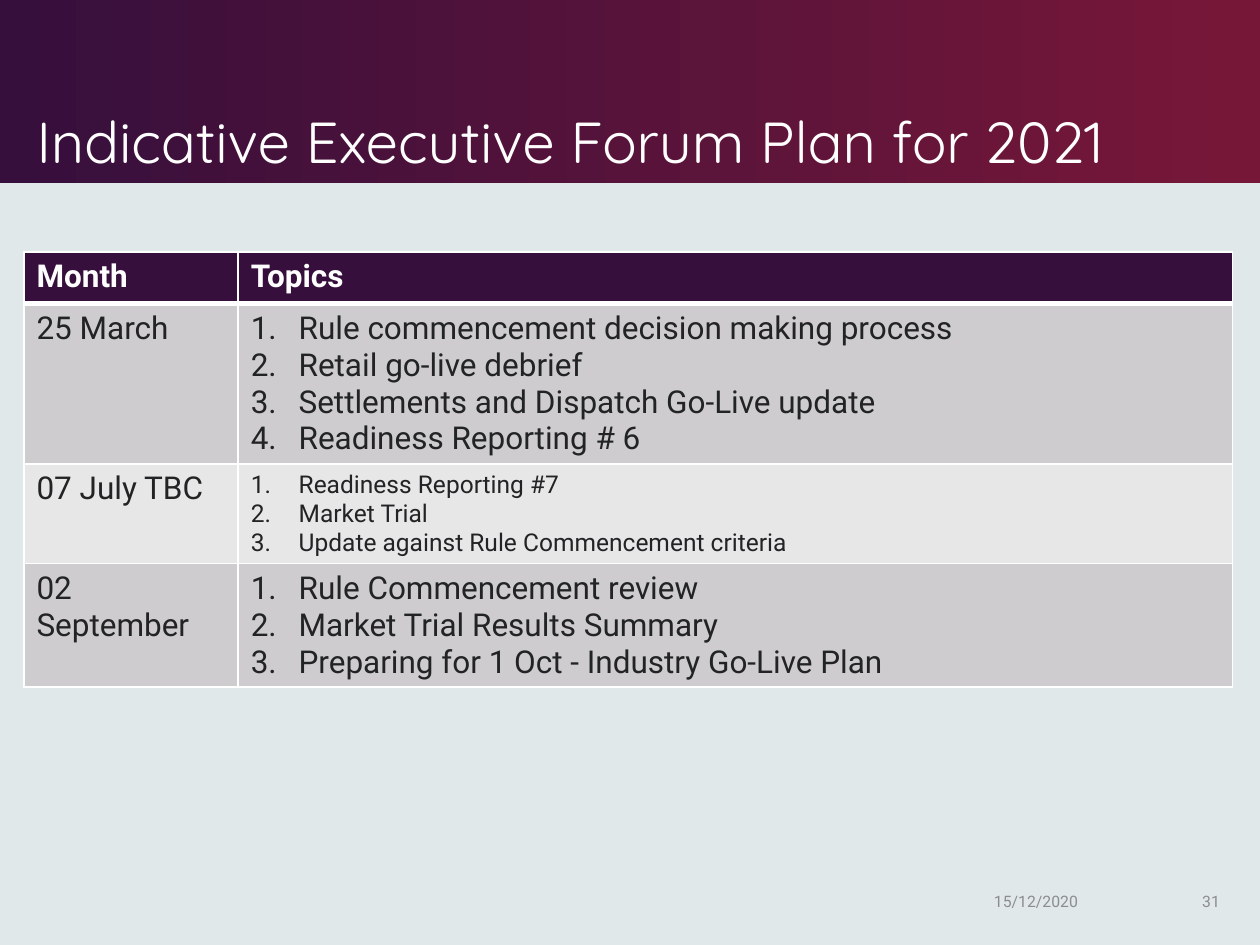
from lxml.etree import SubElement
from pptx import Presentation
from pptx.dml.color import RGBColor
from pptx.enum.dml import MSO_LINE
from pptx.enum.shapes import MSO_SHAPE
from pptx.enum.text import MSO_ANCHOR, MSO_AUTO_SIZE, PP_ALIGN
from pptx.oxml.ns import qn
from pptx.util import Inches, Pt

C = {"plum": "360F3C", "wine": "771738", "mist": "E0E8EA", "white": "FFFFFF",
     "ink": "222324", "dark": "CECCCE", "light": "E8E7E8", "grey": "8D8D8E"}
RGB = {k: RGBColor.from_string(v) for k, v in C.items()}


def add_run(p, text, size, color, bold=False, font="Roboto"):
    r = p.add_run()
    r.text = text
    r.font.name = font
    r.font.size = Pt(size)
    r.font.bold = bold
    r.font.color.rgb = RGB[color]


def add_border(cell, side, width):
    ln = SubElement(cell._tc.get_or_add_tcPr(), qn(f"a:ln{side}"), w=str(Pt(width)))
    fill = SubElement(ln, qn("a:solidFill"))
    SubElement(fill, qn("a:srgbClr"), val=C["white"])


prs = Presentation()
prs.slide_width, prs.slide_height = Inches(10), Inches(7.5)
W, H = prs.slide_width, prs.slide_height
margin = Inches(0.19)
content = Inches(9.59)
band_h = Inches(1.45)

s = prs.slides.add_slide(prs.slide_layouts[5])
s.background.fill.solid()
s.background.fill.fore_color.rgb = RGB["mist"]

band = s.shapes.add_shape(MSO_SHAPE.RECTANGLE, 0, 0, W, band_h)
band.shadow.inherit = False
band.line.fill.background()
band.fill.gradient()
band.fill.gradient_angle = 0
for stop, pos, name in zip(band.fill.gradient_stops, (0, 0.99), ("plum", "wine")):
    stop.position = pos
    stop.color.rgb = RGB[name]

title = s.shapes.title
title.element.addprevious(band.element)
title.left, title.top = margin, Inches(0.15)
title.width, title.height = content, band_h - title.top
tf = title.text_frame
tf.auto_size = MSO_AUTO_SIZE.NONE
tf.vertical_anchor = MSO_ANCHOR.BOTTOM
p = tf.paragraphs[0]
p.alignment = PP_ALIGN.LEFT
p.line_spacing = 0.9
add_run(p, "Indicative Executive Forum Plan for 2021", 33, "white", font="Quicksand")

plan = [
    ("Month", ["Topics"], 18, 0.41),
    ("25 March", ["Rule commencement decision making process", "Retail go-live debrief",
                  "Settlements and Dispatch Go-Live update", "Readiness Reporting # 6"], 18, 1.27),
    ("07 July TBC", ["Readiness Reporting #7", "Market Trial",
                     "Update against Rule Commencement criteria"], 14, 0.79),
    ("02 September", ["Rule Commencement review", "Market Trial Results Summary",
                      "Preparing for 1 Oct - Industry Go-Live Plan"], 18, 0.98),
]
table_h = Inches(sum(row[3] for row in plan))
table = s.shapes.add_table(len(plan), 2, margin, Inches(2), content, table_h).table
table.columns[0].width = Inches(1.7)
table.columns[1].width = content - Inches(1.7)

for i, (month, topics, size, height) in enumerate(plan):
    table.rows[i].height = Inches(height)
    head = i == 0
    fill = "plum" if head else "dark" if i % 2 else "light"
    for j, lines in enumerate(([month], topics)):
        cell = table.cell(i, j)
        for side in "LRTB":
            thick = (head and side == "B") or (i == 1 and side == "T")
            add_border(cell, side, 3 if thick else 1)
        cell.fill.solid()
        cell.fill.fore_color.rgb = RGB[fill]
        tf = cell.text_frame
        for n, line in enumerate(lines):
            p = tf.add_paragraph() if n else tf.paragraphs[0]
            if j and not head:
                pPr = p._p.get_or_add_pPr()
                pPr.set("marL", str(Inches(0.38)))
                pPr.set("indent", str(-Inches(0.38)))
                SubElement(pPr, qn("a:buFont"), typeface="+mj-lt")
                SubElement(pPr, qn("a:buAutoNum"), type="arabicPeriod")
            add_run(p, line, size if j else 18, "white" if head else "ink", head)

for text, left, width, align in (("15/12/2020", 7.79, 1.42, PP_ALIGN.LEFT),
                                 ("31", 9.31, 0.47, PP_ALIGN.RIGHT)):
    sp = s.shapes.add_textbox(Inches(left), Inches(6.95), Inches(width), Inches(0.4))
    tf = sp.text_frame
    tf.word_wrap = True
    tf.vertical_anchor = MSO_ANCHOR.MIDDLE
    p = tf.paragraphs[0]
    p.alignment = align
    add_run(p, text, 9, "grey")

prs.save("out.pptx")
